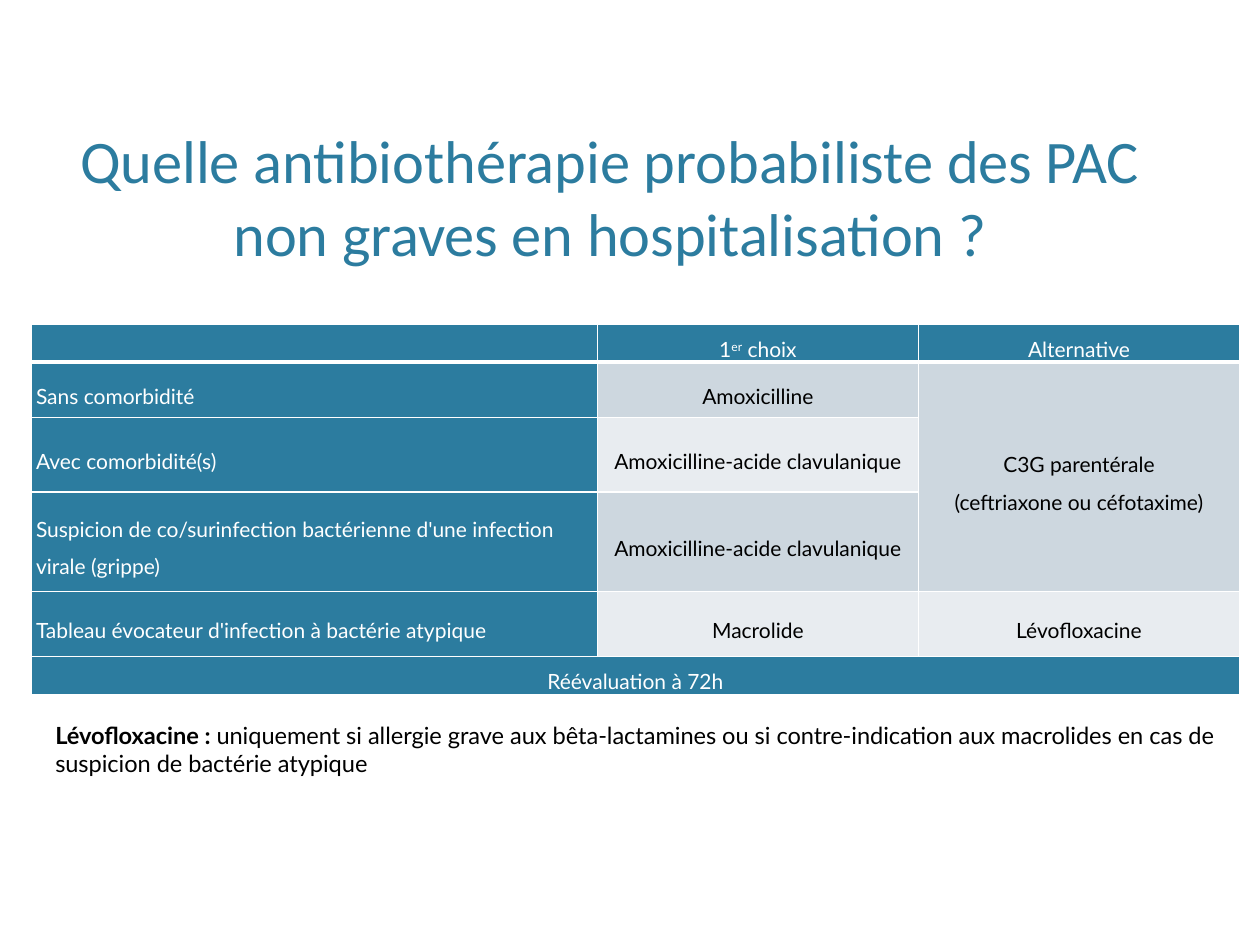
from dataclasses import dataclass

from lxml.etree import SubElement
from pptx import Presentation
from pptx.dml.color import RGBColor as RGB
from pptx.enum.text import MSO_ANCHOR as Anchor, MSO_AUTO_SIZE as AutoSize, PP_ALIGN as Align
from pptx.oxml.ns import qn
from pptx.util import Pt


@dataclass(frozen=True)
class Theme:
    accent: str = "2C7C9F"
    band_dark: str = "CDD7DF"
    band_light: str = "E8ECF0"
    ink: str = "000000"
    white: str = "FFFFFF"
    title_font: str = "Calibri"
    body_font: str = "Lato"
    title_size: float = 34.5
    table_size: float = 12
    note_size: float = 13.5


THEME = Theme()
TITLE = "Quelle antibiothérapie probabiliste des PAC non graves en hospitalisation ?"
COLUMNS = [323.5, 183.5, 183.5]
ROWS = [21.4, 31.8, 42.4, 56.8, 37.3, 21.4]
CHOICES = [
    ["", "1^er^ choix", "Alternative"],
    ["Sans comorbidité", "Amoxicilline", "C3G parentérale\n(ceftriaxone ou céfotaxime)"],
    ["Avec comorbidité(s)", "Amoxicilline-acide clavulanique", ""],
    ["Suspicion de co/surinfection bactérienne d'une infection virale (grippe)",
     "Amoxicilline-acide clavulanique", ""],
    ["Tableau évocateur d'infection à bactérie atypique", "Macrolide", "Lévofloxacine"],
    ["Réévaluation à 72h", "", ""],
]
NOTE = [
    ("Lévofloxacine : ", True),
    ("uniquement si allergie grave aux bêta-lactamines ou si contre-indication "
     "aux macrolides en cas de suspicion de bactérie atypique", False),
]


def add_span(para, text, font, size, color, bold=False):
    span = para.add_run()
    span.text = text
    span.font.name = font
    span.font.size = Pt(size)
    span.font.bold = bold
    span.font.color.rgb = RGB.from_string(color)
    return span


def place(shape, left, top, width, height):
    shape.left, shape.top = Pt(left), Pt(top)
    shape.width, shape.height = Pt(width), Pt(height)


def add_title(page, *area):
    box = page.shapes.title
    place(box, *area)
    frame = box.text_frame
    frame.auto_size = AutoSize.NONE
    frame.vertical_anchor = Anchor.BOTTOM
    para = frame.paragraphs[0]
    para.alignment = Align.CENTER
    add_span(para, TITLE, THEME.title_font, THEME.title_size, THEME.accent)


def set_borders(cell, bottom):
    properties = cell._tc.get_or_add_tcPr()
    for side, width in (("L", 1), ("R", 1), ("T", 1), ("B", bottom)):
        line = SubElement(properties, qn(f"a:ln{side}"), w=str(Pt(width)))
        fill = SubElement(line, qn("a:solidFill"))
        SubElement(fill, qn("a:srgbClr"), val=THEME.white)


def fill_cell(cell, text, fill, color, align):
    cell.margin_left = cell.margin_right = Pt(2.7)
    cell.margin_top = cell.margin_bottom = Pt(0)
    cell.vertical_anchor = Anchor.MIDDLE
    cell.fill.solid()
    cell.fill.fore_color.rgb = RGB.from_string(fill)
    frame = cell.text_frame
    for index, sentence in enumerate(text.split("\n")):
        para = frame.add_paragraph() if index else frame.paragraphs[0]
        para.alignment = align
        para.line_spacing = 1.5
        # Odd pieces between carets are superscript
        for piece, part in enumerate(sentence.split("^")):
            if part:
                span = add_span(para, part, THEME.body_font, THEME.table_size, color)
                if piece % 2:
                    span.font._element.set("baseline", "30000")
        if not sentence:
            # Keeps an empty cell from stretching its row
            SubElement(para._p, qn("a:endParaRPr"), sz=str(int(THEME.table_size * 100)))


def add_choices(page, left, top):
    table = page.shapes.add_table(len(ROWS), len(COLUMNS), Pt(left), Pt(top),
                                  Pt(sum(COLUMNS)), Pt(sum(ROWS))).table
    for column, width in zip(table.columns, COLUMNS):
        column.width = Pt(width)
    for row, height in zip(table.rows, ROWS):
        row.height = Pt(height)

    last = len(ROWS) - 1
    for r, texts in enumerate(CHOICES):
        for c, text in enumerate(texts):
            cell = table.cell(r, c)
            heading = r in (0, last) or c == 0
            band = THEME.band_dark if r % 2 else THEME.band_light
            set_borders(cell, bottom=3 if r == 0 else 1)
            fill_cell(cell, text,
                      THEME.accent if heading else band,
                      THEME.white if heading else THEME.ink,
                      Align.LEFT if c == 0 and 0 < r < last else Align.CENTER)

    # Shared alternative, and the full-width closing row
    table.cell(1, 2).merge(table.cell(3, 2))
    table.cell(last, 0).merge(table.cell(last, 2))


def add_note(page, *area):
    box = page.shapes.add_textbox(*map(Pt, area))
    frame = box.text_frame
    frame.word_wrap = True
    frame.auto_size = AutoSize.SHAPE_TO_FIT_TEXT
    para = frame.paragraphs[0]
    para.space_after = Pt(7.5)
    for text, bold in NOTE:
        add_span(para, text, THEME.body_font, THEME.note_size, THEME.ink, bold)


def main():
    deck = Presentation()
    deck.slide_width, deck.slide_height = Pt(720), Pt(540)
    page = deck.slides.add_slide(deck.slide_layouts[5])
    add_title(page, 31.7, 77.8, 633.6, 79.2)
    add_choices(page, 17.9, 185.3)
    add_note(page, 24.5, 408.2, 689.8, 40.3)
    deck.save("out.pptx")


if __name__ == "__main__":
    main()
